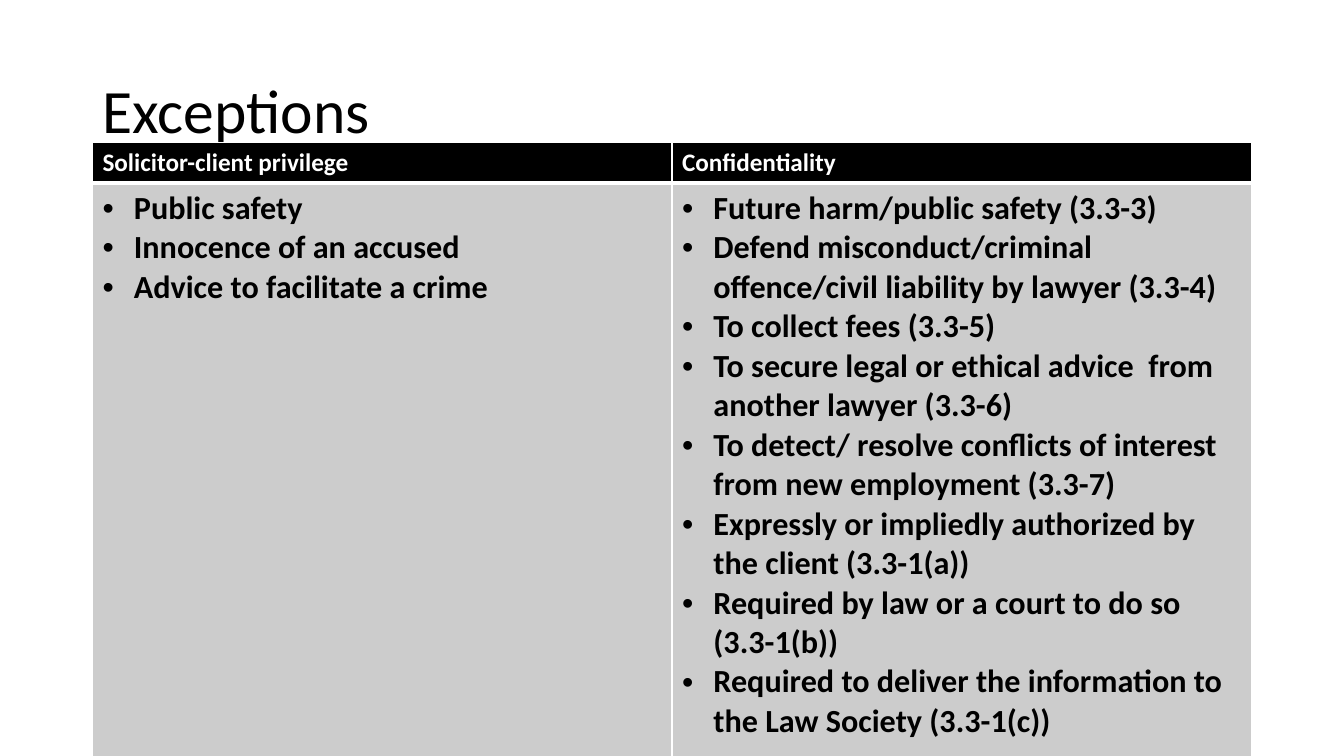
from dataclasses import dataclass

from lxml.etree import SubElement
from pptx import Presentation
from pptx.dml.color import RGBColor as Rgb
from pptx.enum.text import MSO_ANCHOR as Anchor
from pptx.enum.text import PP_ALIGN as Align
from pptx.oxml import parse_xml
from pptx.oxml.ns import nsdecls, qn
from pptx.util import Cm, Pt

COLORS = {"text": "000000", "header": "000000", "body": "CCCCCC", "white": "FFFFFF"}
FONT = "Calibri"
LEFT, WIDTH = Cm(2.33), Cm(29.21)
BULLET_INDENT = Cm(0.79)


@dataclass
class Column:
    heading: str
    items: list[str]


@dataclass
class RowStyle:
    fill: str
    color: str
    size: float
    top: float
    bottom: float
    bulleted: bool


COLUMNS = [
    Column("Solicitor-client privilege", [
        "Public safety",
        "Innocence of an accused",
        "Advice to facilitate a crime",
    ]),
    Column("Confidentiality", [
        "Future harm/public safety (3.3-3)",
        "Defend misconduct/criminal offence/civil liability by lawyer (3.3-4)",
        "To collect fees (3.3-5)",
        "To secure legal or ethical advice  from another lawyer (3.3-6)",
        "To detect/ resolve conflicts of interest from new employment (3.3-7)",
        "Expressly or impliedly authorized by the client (3.3-1(a))",
        "Required by law or a court to do so (3.3-1(b))",
        "Required to deliver the information to the Law Society (3.3-1(c))",
    ]),
]
HEADER = RowStyle("header", "white", 18, 1, 3, False)
BODY = RowStyle("body", "text", 23, 3, 1, True)


def set_font(p, size: float, color: str, bold: bool) -> None:
    p.font.name = FONT
    p.font.size = Pt(size)
    p.font.bold = bold
    p.font.color.rgb = Rgb.from_string(COLORS[color])


def add_bullet(p) -> None:
    pPr = p._p.get_or_add_pPr()
    pPr.set("marL", str(BULLET_INDENT))
    pPr.set("indent", str(-BULLET_INDENT))
    bullet_font = parse_xml(f'<a:buFont {nsdecls("a")} typeface="Arial"/>')
    bullet = parse_xml(f'<a:buChar {nsdecls("a")} char="•"/>')
    pPr.insert(0, bullet_font)
    pPr.insert(1, bullet)


def set_borders(cell, top: float, bottom: float) -> None:
    tcPr = cell._tc.get_or_add_tcPr()
    widths = {"lnL": 1, "lnR": 1, "lnT": top, "lnB": bottom}
    for i, (side, width) in enumerate(widths.items()):
        ln = SubElement(tcPr, qn(f"a:{side}"), w=str(Pt(width)))
        fill = SubElement(ln, qn("a:solidFill"))
        SubElement(fill, qn("a:srgbClr"), val=COLORS["white"])
        tcPr.insert(i, ln)


def fill_cell(cell, lines: list[str], style: RowStyle) -> None:
    cell.fill.solid()
    cell.fill.fore_color.rgb = Rgb.from_string(COLORS[style.fill])
    set_borders(cell, style.top, style.bottom)
    tf = cell.text_frame
    tf.text = "\n".join(lines)
    for p in tf.paragraphs:
        set_font(p, style.size, style.color, True)
        if style.bulleted:
            add_bullet(p)


def main() -> None:
    prs = Presentation()
    prs.slide_width, prs.slide_height = Cm(33.87), Cm(19.05)
    s = prs.slides.add_slide(prs.slide_layouts[5])

    # Title
    title = s.shapes.title
    title.left, title.top, title.width, title.height = LEFT, Cm(1.01), WIDTH, Cm(3.68)
    tf = title.text_frame
    tf.text = "Exceptions"
    tf.vertical_anchor = Anchor.MIDDLE
    p = tf.paragraphs[0]
    p.alignment = Align.LEFT
    p.line_spacing = 0.9
    set_font(p, 44, "text", False)

    # Comparison table
    heights = [Cm(1.03), Cm(20.71)]
    table = s.shapes.add_table(
        len(heights), len(COLUMNS), LEFT, Cm(3.59), WIDTH, sum(heights)
    ).table
    for row, height in zip(table.rows, heights):
        row.height = height
    for i, column in enumerate(COLUMNS):
        fill_cell(table.cell(0, i), [column.heading], HEADER)
        fill_cell(table.cell(1, i), column.items, BODY)

    prs.save("out.pptx")


if __name__ == "__main__":
    main()
